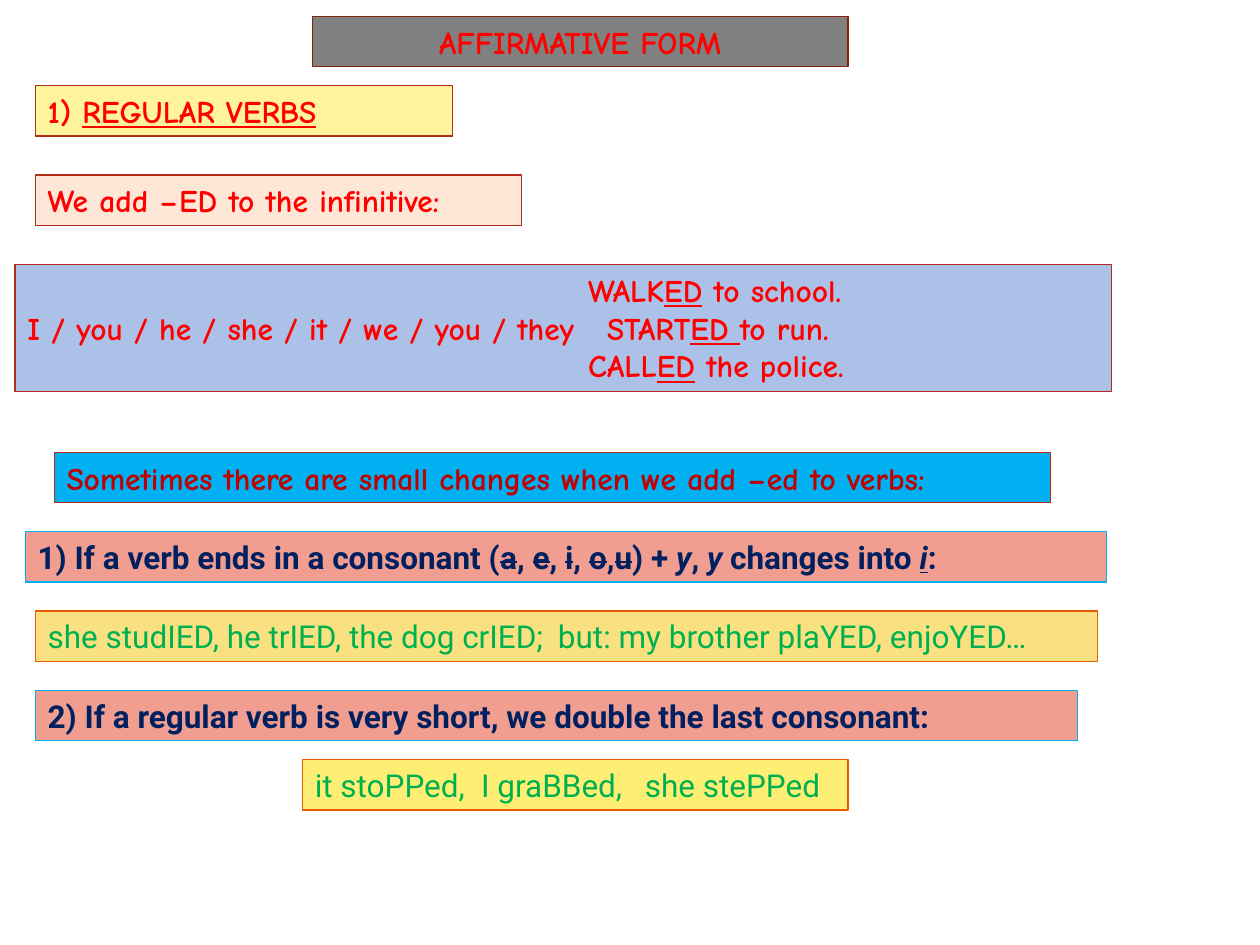
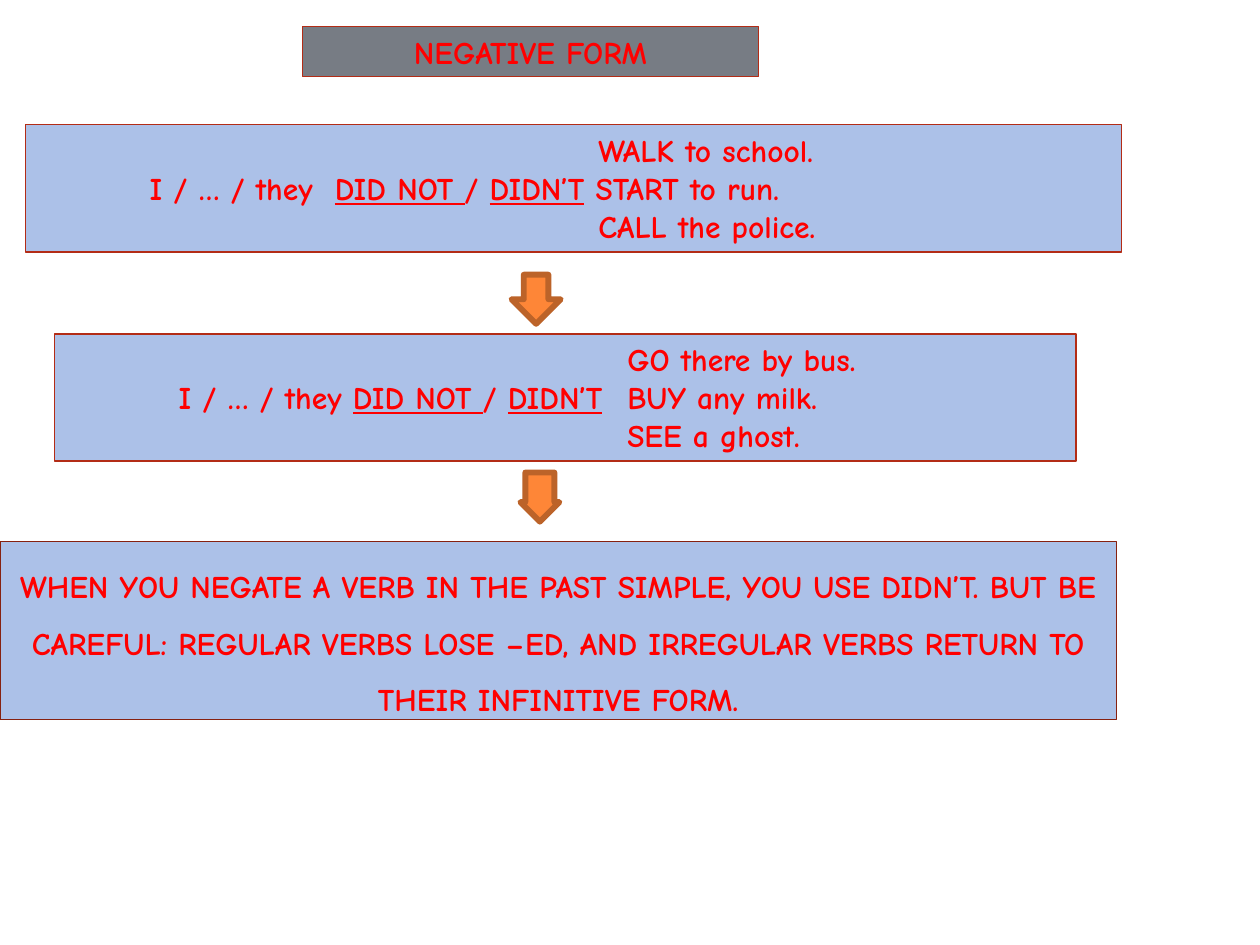
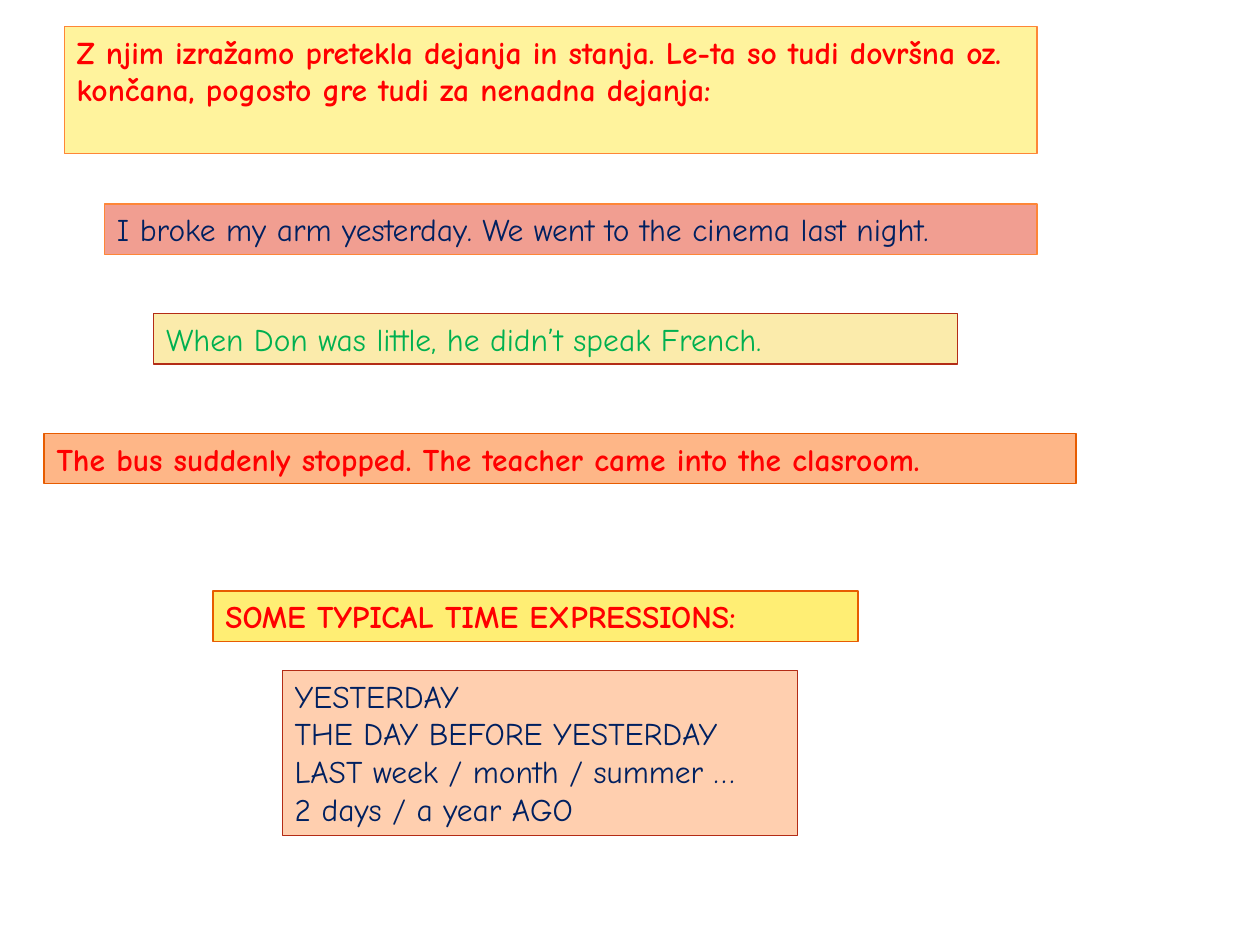
from dataclasses import dataclass, field

from lxml.etree import SubElement
from pptx import Presentation
from pptx.dml.color import RGBColor
from pptx.enum.shapes import MSO_SHAPE
from pptx.enum.text import MSO_ANCHOR, MSO_AUTO_SIZE, PP_ALIGN
from pptx.oxml.ns import qn
from pptx.util import Inches, Pt

RED = RGBColor(0xFF, 0x00, 0x00)
DARK_RED = RGBColor(0xC0, 0x00, 0x00)
NAVY = RGBColor(0x00, 0x20, 0x60)
GREEN = RGBColor(0x00, 0xB0, 0x50)
SKY = RGBColor(0x00, 0xB0, 0xF0)
PERIWINKLE = RGBColor(0xAC, 0xC1, 0xE8)
GRAY = RGBColor(0x80, 0x80, 0x80)
SLATE = RGBColor(0x77, 0x7C, 0x84)
SALMON = RGBColor(0xF1, 0x9E, 0x91)
GOLD = RGBColor(0xF9, 0xE1, 0x81)
YELLOW = RGBColor(0xFF, 0xEE, 0x74)
PALE_YELLOW = RGBColor(0xFF, 0xF3, 0x9D)
CREAM = RGBColor(0xFB, 0xEB, 0xAB)
BLUSH = RGBColor(0xFF, 0xE7, 0xD7)
PEACH = RGBColor(0xFF, 0xCF, 0xAF)
APRICOT = RGBColor(0xFE, 0xB6, 0x87)
ORANGE = RGBColor(0xFE, 0x86, 0x37)
BURNT_ORANGE = RGBColor(0xE7, 0x5C, 0x01)
BROWN = RGBColor(0xBC, 0x63, 0x29)
BRICK = RGBColor(0xB3, 0x2C, 0x16)
MAROON = RGBColor(0x86, 0x21, 0x10)

HAND_FONT = "Comic Neue"
PLAIN_FONT = "Roboto"
TEXT_SIZE = Pt(18)
ROW_HEIGHT = 0.4
TRIPLE_HEIGHT = 1.01

SUBJECT_TAB = 0.89
VERB_TAB = 4.45


@dataclass(frozen=True)
class Span:
    text: str
    underline: bool = False
    italic: bool = False
    strike: bool = False


@dataclass(frozen=True)
class Line:
    spans: tuple[Span, ...]
    tabs: tuple[float, ...] = ()


@dataclass(frozen=True)
class TextStyle:
    color: RGBColor
    name: str = HAND_FONT
    bold: bool = True


@dataclass(frozen=True)
class Box:
    left: float
    top: float
    width: float
    fill: RGBColor
    border: RGBColor
    style: TextStyle
    lines: list[Line]
    height: float = ROW_HEIGHT
    paragraph_format: dict = field(default_factory=dict)


@dataclass(frozen=True)
class Arrow:
    left: float
    top: float
    width: float
    shaft: float = 0.5


RED_HAND = TextStyle(RED)
DARK_RED_HAND = TextStyle(DARK_RED)
NAVY_HAND = TextStyle(NAVY, bold=False)
GREEN_HAND = TextStyle(GREEN, bold=False)
RULE = TextStyle(NAVY, PLAIN_FONT)
EXAMPLE = TextStyle(GREEN, PLAIN_FONT, bold=False)
CENTERED = {"alignment": PP_ALIGN.CENTER}


def line(*parts: str | Span, tabs: tuple[float, ...] = ()) -> Line:
    spans = tuple(Span(part) if isinstance(part, str) else part for part in parts)
    return Line(spans, tabs)


def underlined(text: str) -> Span:
    return Span(text, underline=True)


def italic(text: str) -> Span:
    return Span(text, italic=True)


def struck(text: str) -> Span:
    return Span(text, strike=True)


def verb_line(*parts: str | Span) -> Line:
    """Return a line that starts in the verb column."""
    return line("\t", *parts, tabs=(VERB_TAB,))


def negative_line(subject_gap: str, verb_gap: str, ending: str, tabs: tuple[float, ...]) -> Line:
    return line(f"\tI / … / they{subject_gap}", underlined("DID NOT "), "/ ",
                underlined("DIDN’T"), f"{verb_gap}{ending}", tabs=(SUBJECT_TAB, *tabs))


def title_box(left: float, top: float, width: float, fill: RGBColor,
              border: RGBColor, text: str) -> Box:
    return Box(left, top, width, fill, border, RED_HAND, [line(text)],
               paragraph_format=CENTERED)


def verb_box(left: float, top: float, width: float, lines: list[Line]) -> Box:
    return Box(left, top, width, PERIWINKLE, BRICK, RED_HAND, lines, TRIPLE_HEIGHT)


def vowels() -> list[str | Span]:
    """Return the struck-out vowels with their separators."""
    return [struck("a"), ", ", struck("e"), ", ", struck("i"), ", ",
            struck("o"), ",", struck("u")]


AFFIRMATIVE = [
    title_box(2.48, 0.13, 4.25, GRAY, MAROON, "AFFIRMATIVE FORM"),
    Box(0.28, 0.68, 3.31, PALE_YELLOW, BRICK, RED_HAND,
        [line("1) ", underlined("REGULAR VERBS"))]),
    Box(0.28, 1.39, 3.86, BLUSH, BRICK, RED_HAND, [line("We add –ED to the infinitive:")]),
    verb_box(0.12, 2.1, 8.7, [
        verb_line("WALK", underlined("ED"), " to school."),
        line("I / you / he / she / it / we / you / they\tSTART", underlined("ED "),
             "to run.", tabs=(4.6,)),
        verb_line("CALL", underlined("ED"), " the police."),
    ]),
    Box(0.43, 3.59, 7.91, SKY, BRICK, DARK_RED_HAND,
        [line("Sometimes there are small changes when we add –ed to verbs:")]),
    Box(0.2, 4.22, 8.58, SALMON, SKY, RULE, [
        line("1) If a verb ends in a consonant (", *vowels(), ") + ", italic("y"), ", ",
             italic("y "), "changes into ", Span("i", underline=True, italic=True), ":")]),
    Box(0.28, 4.85, 8.43, GOLD, BURNT_ORANGE, EXAMPLE, [
        line("she studIED, he trIED, the dog crIED;\tbut: my brother plaYED, enjoYED…",
             tabs=(4.05,))]),
    Box(0.28, 5.48, 8.27, SALMON, SKY, RULE,
        [line("2) If a regular verb is very short, we double the last consonant:")]),
    Box(2.4, 6.03, 4.33, YELLOW, BURNT_ORANGE, EXAMPLE,
        [line("it stoPPed,\tI graBBed,\tshe stePPed", tabs=(1.32, 2.62))]),
]

NEGATIVE = [
    title_box(2.4, 0.21, 3.62, SLATE, BRICK, "NEGATIVE FORM"),
    verb_box(0.2, 0.99, 8.7, [
        verb_line("WALK to school."),
        negative_line("\t", " ", "START to run.", (2.36,)),
        verb_line("CALL the police."),
    ]),
    Arrow(4.06, 2.18, 0.39),
    verb_box(0.43, 2.65, 8.11, [
        verb_line("GO there by bus."),
        negative_line(" ", "\t", "BUY any milk.", (VERB_TAB,)),
        verb_line("SEE a ghost."),
    ]),
    Arrow(4.13, 3.75, 0.31, shaft=0.745),
    Box(0, 4.3, 8.86, PERIWINKLE, MAROON, RED_HAND, [
        line("WHEN YOU NEGATE A VERB IN THE PAST SIMPLE, YOU USE DIDN’T. BUT BE CAREFUL: "
             "REGULAR VERBS LOSE –ED, AND IRREGULAR VERBS RETURN TO THEIR INFINITIVE FORM.")],
        height=1.41, paragraph_format={**CENTERED, "line_spacing": 1.5}),
]

USAGE = [
    Box(0.51, 0.21, 7.72, PALE_YELLOW, ORANGE, RED_HAND, [
        line("Z njim izražamo pretekla dejanja in stanja. Le-ta so tudi dovršna oz. "
             "končana, pogosto gre tudi za nenadna dejanja:")], TRIPLE_HEIGHT),
    Box(0.83, 1.62, 7.4, SALMON, ORANGE, NAVY_HAND,
        [line("I broke my arm yesterday. We went to the cinema last night.")]),
    Box(1.22, 2.49, 6.38, CREAM, BRICK, GREEN_HAND,
        [line("When Don was little, he didn’t speak French.")]),
    Box(0.35, 3.44, 8.19, APRICOT, BURNT_ORANGE, RED_HAND,
        [line("The bus suddenly stopped. The teacher came into the clasroom.")]),
    Box(1.69, 4.69, 5.12, YELLOW, BURNT_ORANGE, RED_HAND,
        [line("SOME TYPICAL TIME EXPRESSIONS:")]),
    Box(2.24, 5.32, 4.09, PEACH, BRICK, NAVY_HAND, [
        line("YESTERDAY"),
        line("THE DAY BEFORE YESTERDAY"),
        line("LAST week / month / summer …"),
        line("2 days / a year AGO"),
    ], height=1.31),
]


def set_attributes(target, values: dict) -> None:
    for name, value in values.items():
        setattr(target, name, value)


def add_preset(slide, preset, bounds: tuple[float, ...], fill: RGBColor,
               border: RGBColor, weight: float):
    shape = slide.shapes.add_shape(preset, *map(Inches, bounds))
    shape.shadow.inherit = False
    shape.fill.solid()
    shape.fill.fore_color.rgb = fill
    shape.line.color.rgb = border
    shape.line.width = Pt(weight)
    return shape


def add_tab_stops(paragraph, tabs: tuple[float, ...]) -> None:
    tab_list = SubElement(paragraph._p.get_or_add_pPr(), qn("a:tabLst"))
    for position in tabs:
        SubElement(tab_list, qn("a:tab"), pos=str(Inches(position)), algn="l")


def write_line(paragraph, content: Line, box: Box) -> None:
    if content.tabs:
        add_tab_stops(paragraph, content.tabs)
    set_attributes(paragraph, {"alignment": PP_ALIGN.LEFT, **box.paragraph_format})
    for span in content.spans:
        run = paragraph.add_run()
        run.text = span.text
        set_attributes(run.font, {
            "name": box.style.name, "size": TEXT_SIZE, "bold": box.style.bold,
            "italic": span.italic, "underline": span.underline,
        })
        run.font.color.rgb = box.style.color
        if span.strike:
            run._r.get_or_add_rPr().set("strike", "sngStrike")


def draw_box(slide, box: Box) -> None:
    shape = add_preset(slide, MSO_SHAPE.RECTANGLE, (box.left, box.top, box.width, box.height),
                       box.fill, box.border, 0.75)
    frame = shape.text_frame
    set_attributes(frame, {"word_wrap": True, "auto_size": MSO_AUTO_SIZE.NONE,
                           "vertical_anchor": MSO_ANCHOR.TOP})
    for index, content in enumerate(box.lines):
        paragraph = frame.add_paragraph() if index else frame.paragraphs[0]
        write_line(paragraph, content, box)


def draw_arrow(slide, arrow: Arrow) -> None:
    shape = add_preset(slide, MSO_SHAPE.DOWN_ARROW, (arrow.left, arrow.top, arrow.width, 0.39),
                       ORANGE, BROWN, 3.35)
    shape.adjustments[0] = arrow.shaft
    shape.adjustments[1] = 0.5


def main() -> None:
    presentation = Presentation()
    presentation.slide_width = Inches(10)
    presentation.slide_height = Inches(7.5)
    for items in (AFFIRMATIVE, NEGATIVE, USAGE):
        slide = presentation.slides.add_slide(presentation.slide_layouts[6])
        for item in items:
            if isinstance(item, Box):
                draw_box(slide, item)
            else:
                draw_arrow(slide, item)
    presentation.save("out.pptx")


if __name__ == "__main__":
    main()
